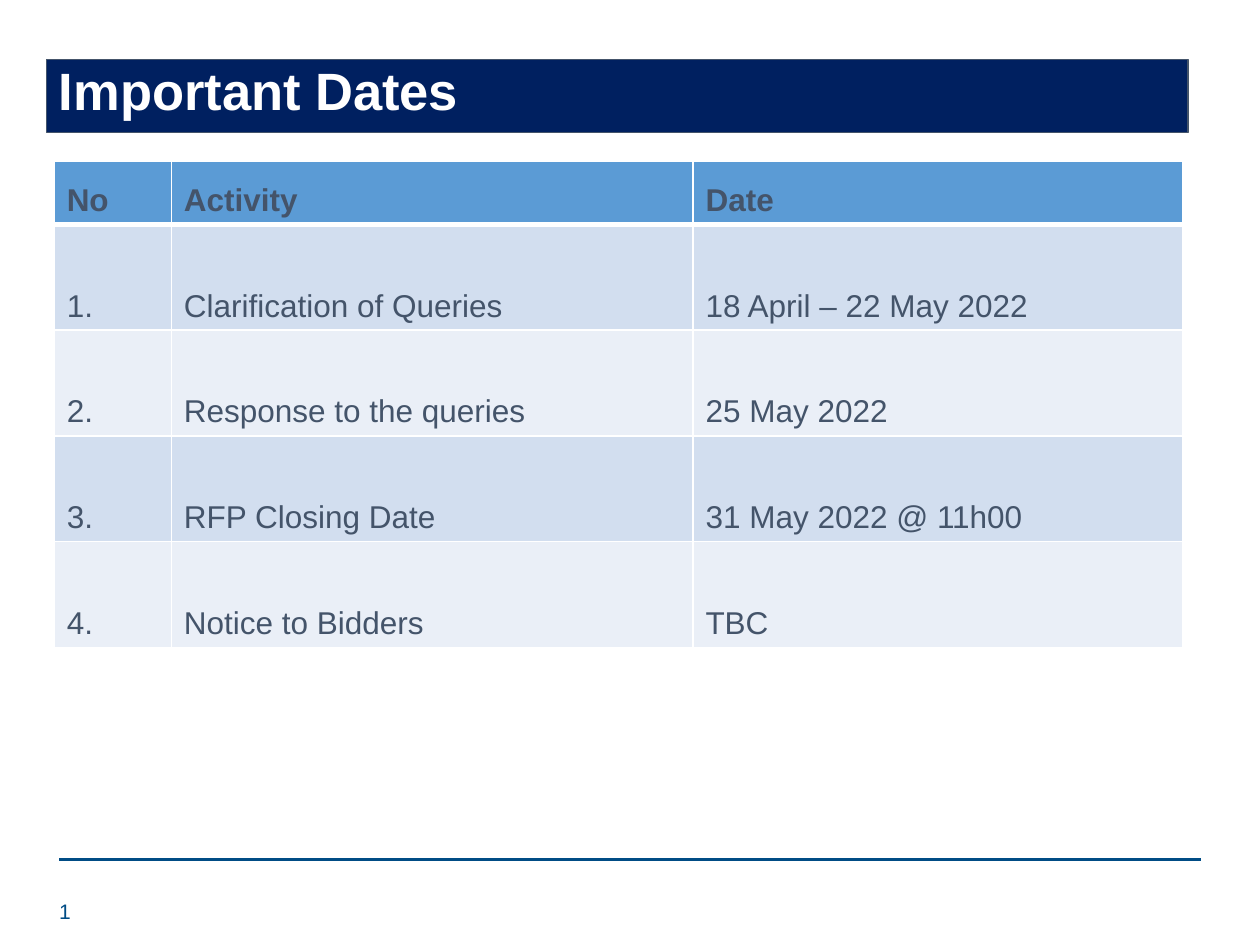
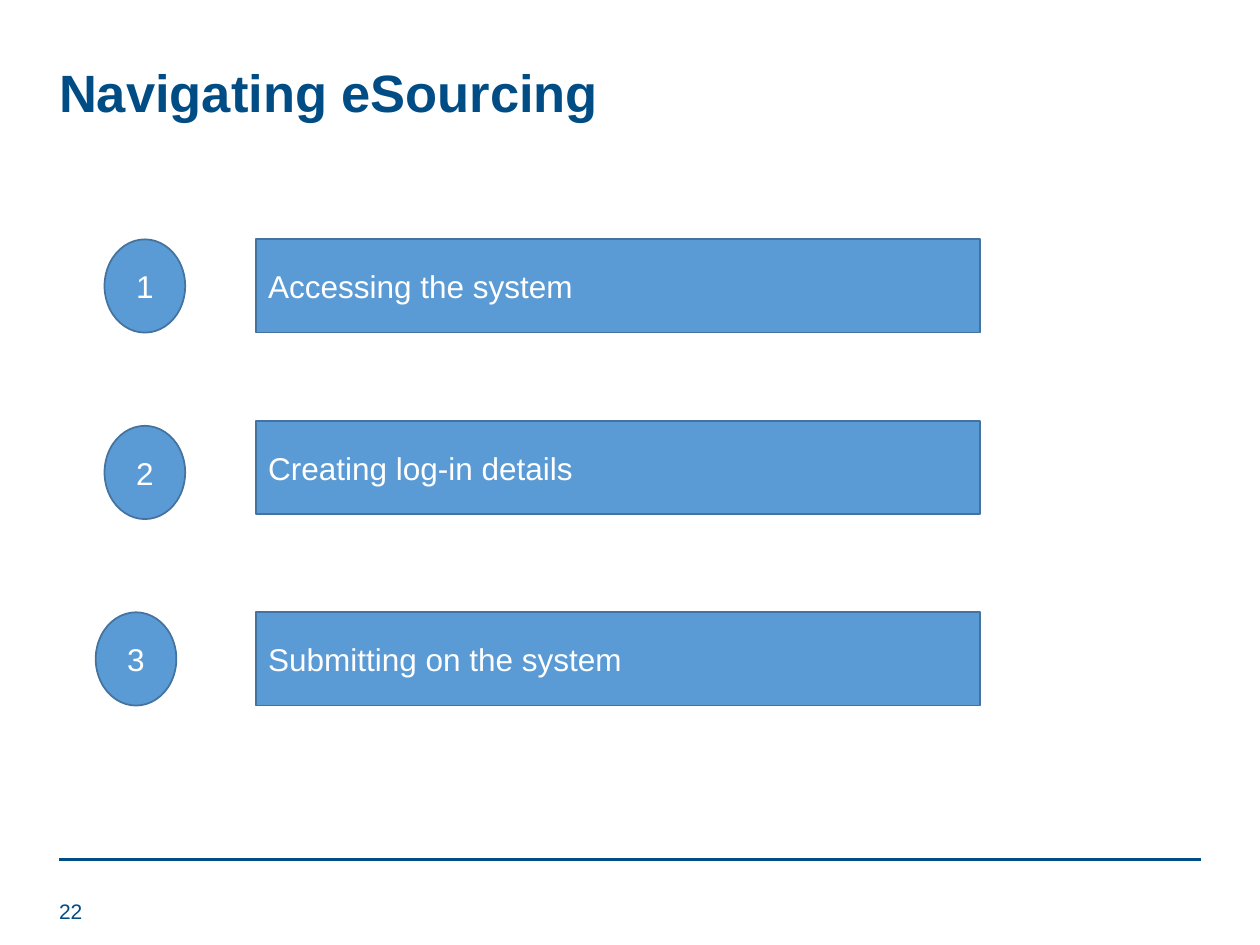
"""Builds two bid briefing slides: important dates and eSourcing steps."""
from dataclasses import dataclass
from typing import Any, NamedTuple, Optional

from lxml.etree import SubElement
from pptx import Presentation
from pptx.dml.color import RGBColor
from pptx.enum.shapes import MSO_CONNECTOR as Connector, MSO_SHAPE as Preset
from pptx.enum.text import MSO_ANCHOR as Anchor, PP_ALIGN as Align
from pptx.oxml.ns import qn
from pptx.util import Emu, Pt

EMU_PER_PX = 9144


@dataclass(frozen=True)
class Theme:
    """Colours, font and type sizes shared by the slides."""
    font: str = "Arial"
    title_size: int = 30
    body_size: int = 18
    number_size: int = 12
    white: str = "FFFFFF"
    navy: str = "002060"
    brand: str = "004C85"
    slate: str = "44546A"
    blue: str = "5B9BD5"
    outline: str = "43739E"
    row_fills: tuple[str, str] = ("D2DEEF", "EAEFF7")


class Box(NamedTuple):
    """Left, top, width and height in px."""
    left: int
    top: int
    width: int
    height: int


class Step(NamedTuple):
    """A numbered step and the places of its badge and bar."""
    label: str
    badge_left: int
    badge_top: int
    bar_top: int


THEME = Theme()
SLIDE_SIZE = (1000, 750)
RULE_LEFT, RULE_RIGHT, RULE_TOP = 47, 953, 682
NUMBER_BOX = Box(37, 703, 225, 40)
TABLE_BOX = Box(43, 128, 896, 386)
COLUMN_WIDTHS = (93, 414, 389)
HEADER_HEIGHT, ROW_HEIGHT = 50, 84
DATES = (
    ("Clarification of Queries", "18 April – 22 May 2022"),
    ("Response to the queries", "25 May 2022"),
    ("RFP Closing Date", "31 May 2022 @ 11h00"),
    ("Notice to Bidders", "TBC"),
)
BADGE_WIDTH, BAR_LEFT, BAR_WIDTH, STEP_HEIGHT = 64, 203, 575, 74
STEPS = (
    Step("Accessing the system", 83, 190, 190),
    Step("Creating log-in details", 83, 338, 334),
    Step("Submitting on the system", 76, 486, 486),
)


def px(length: int) -> Emu:
    """Turn px into EMU."""
    return Emu(length * EMU_PER_PX)


def place(box: Box) -> tuple[Emu, ...]:
    """Turn a box into the EMU arguments of an add method."""
    return tuple(px(length) for length in box)


def rgb(value: str) -> RGBColor:
    """Turn a hex string into a colour."""
    return RGBColor.from_string(value)


def write(frame: Any, text: str, *, size: int, color: str, bold: bool = False,
          align: Align = Align.LEFT, spacing: Optional[float] = None) -> None:
    """Put one formatted paragraph into a text frame."""
    frame.word_wrap = True
    paragraph = frame.paragraphs[0]
    paragraph.alignment = align
    paragraph.line_spacing = spacing
    run = paragraph.add_run()
    run.text = text
    run.font.name, run.font.size, run.font.bold = THEME.font, Pt(size), bold
    run.font.color.rgb = rgb(color)


def add_panel(slide: Any, preset: Preset, box: Box, fill: str, line: str,
              weight: float, anchor: Anchor = Anchor.MIDDLE) -> Any:
    """Add a filled, outlined shape and return its text frame."""
    panel = slide.shapes.add_shape(preset, *place(box))
    panel.shadow.inherit = False
    panel.fill.solid()
    panel.fill.fore_color.rgb = rgb(fill)
    panel.line.color.rgb = rgb(line)
    panel.line.width = Pt(weight)
    panel.text_frame.vertical_anchor = anchor
    return panel.text_frame


def write_title(frame: Any, text: str, color: str) -> None:
    """Write a slide title in the shared style."""
    write(frame, text, size=THEME.title_size, color=color, bold=True, spacing=0.9)


def add_base_slide(deck: Any, number: str) -> Any:
    """Add a blank slide with the footer rule and its number."""
    slide = deck.slides.add_slide(deck.slide_layouts[6])
    rule = slide.shapes.add_connector(
        Connector.STRAIGHT, px(RULE_LEFT), px(RULE_TOP), px(RULE_RIGHT), px(RULE_TOP))
    rule.line.color.rgb = rgb(THEME.brand)
    rule.line.width = Pt(2)
    SubElement(rule._element.spPr, qn("a:effectLst"))
    frame = slide.shapes.add_textbox(*place(NUMBER_BOX)).text_frame
    frame.vertical_anchor = Anchor.MIDDLE
    write(frame, number, size=THEME.number_size, color=THEME.brand)
    return slide


def add_borders(cell: Any, top: int, bottom: int) -> None:
    """Give a cell white borders, with top and bottom weights in points."""
    properties = cell._tc.get_or_add_tcPr()
    for side, weight in (("L", 1), ("R", 1), ("T", top), ("B", bottom)):
        border = SubElement(properties, qn(f"a:ln{side}"), w=str(Pt(weight)))
        fill = SubElement(border, qn("a:solidFill"))
        SubElement(fill, qn("a:srgbClr"), val=THEME.white)


def add_dates_table(slide: Any) -> None:
    """Add the table of numbered activities and their dates."""
    rows = [("No", "Activity", "Date")]
    rows += [(f"{number}.", *entry) for number, entry in enumerate(DATES, 1)]
    table = slide.shapes.add_table(
        len(rows), len(COLUMN_WIDTHS), *place(TABLE_BOX)).table
    for column, width in zip(table.columns, COLUMN_WIDTHS):
        column.width = px(width)
    for index, texts in enumerate(rows):
        header = index == 0
        table.rows[index].height = px(HEADER_HEIGHT if header else ROW_HEIGHT)
        for cell, text in zip(table.rows[index].cells, texts):
            add_borders(cell, top=3 if index == 1 else 1, bottom=3 if header else 1)
            cell.fill.solid()
            cell.fill.fore_color.rgb = rgb(
                THEME.blue if header else THEME.row_fills[(index - 1) % 2])
            cell.vertical_anchor = Anchor.BOTTOM
            write(cell.text_frame, text, size=THEME.body_size,
                  color=THEME.slate, bold=header)


def add_step(slide: Any, number: int, step: Step) -> None:
    """Add a numbered badge and the bar that names the step."""
    badge = Box(step.badge_left, step.badge_top, BADGE_WIDTH, STEP_HEIGHT)
    bar = Box(BAR_LEFT, step.bar_top, BAR_WIDTH, STEP_HEIGHT)
    for preset, box, text, align in (
            (Preset.OVAL, badge, str(number), Align.CENTER),
            (Preset.RECTANGLE, bar, step.label, Align.LEFT)):
        frame = add_panel(slide, preset, box, THEME.blue, THEME.outline, 1)
        write(frame, text, size=THEME.body_size, color=THEME.white, align=align)


def build_dates_slide(deck: Any) -> None:
    """Build the slide of important dates."""
    slide = add_base_slide(deck, "1")
    band = add_panel(slide, Preset.RECTANGLE, Box(37, 47, 906, 58),
                     THEME.navy, THEME.slate, 0.75, Anchor.TOP)
    write_title(band, "Important Dates", THEME.white)
    add_dates_table(slide)


def build_steps_slide(deck: Any) -> None:
    """Build the slide of eSourcing steps."""
    slide = add_base_slide(deck, "22")
    heading = slide.shapes.add_textbox(*place(Box(37, 48, 862, 58)))
    write_title(heading.text_frame, "Navigating eSourcing", THEME.brand)
    for number, step in enumerate(STEPS, 1):
        add_step(slide, number, step)


def main() -> None:
    """Build and save the deck."""
    deck = Presentation()
    deck.slide_width, deck.slide_height = map(px, SLIDE_SIZE)
    build_dates_slide(deck)
    build_steps_slide(deck)
    deck.save("out.pptx")


if __name__ == "__main__":
    main()
